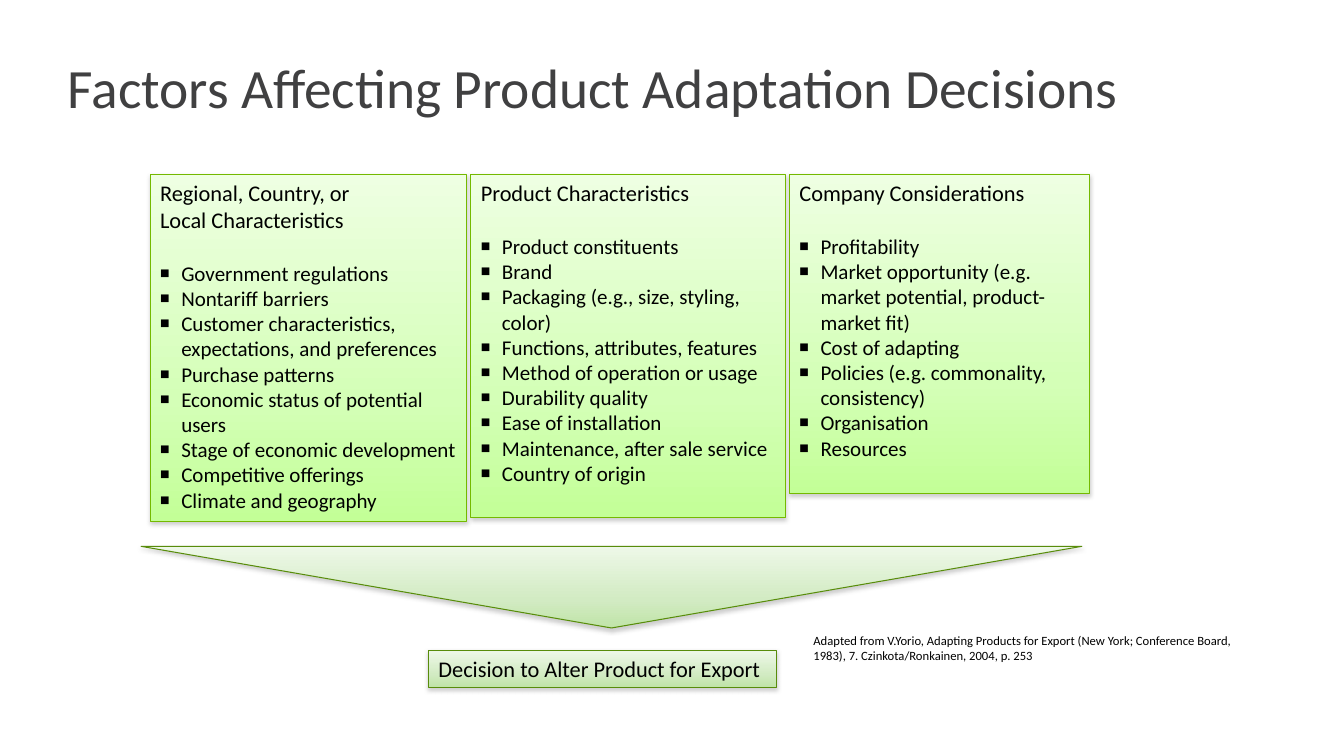
from lxml import etree
from pptx import Presentation
from pptx.dml.color import RGBColor
from pptx.enum.shapes import MSO_SHAPE
from pptx.enum.text import MSO_ANCHOR, MSO_AUTO_SIZE, PP_ALIGN
from pptx.oxml.ns import qn
from pptx.util import Inches, Pt

RECT = MSO_SHAPE.RECTANGLE
MERGE = MSO_SHAPE.FLOWCHART_MERGE
TOP, MIDDLE = MSO_ANCHOR.TOP, MSO_ANCHOR.MIDDLE
LEFT = PP_ALIGN.LEFT
FIXED = MSO_AUTO_SIZE.NONE

LIME = ("EEFFE2", "D4FFB7", "C3FF97")
SAGE = ("EEF8E8", "D2EBC3", "C0E4A8")
STOPS = (0, 65, 100)
INDENT = 0.21

FACTORS = [
    ((1.49, 1.73, 3.14, 3.44),
     ["Regional, Country, or", "Local Characteristics"],
     ["Government regulations", "Nontariff barriers",
      "Customer characteristics, expectations, and preferences",
      "Purchase patterns", "Economic status of potential users",
      "Stage of economic development", "Competitive offerings",
      "Climate and geography"]),
    ((4.67, 1.73, 3.12, 3.4),
     ["Product Characteristics"],
     ["Product constituents", "Brand",
      "Packaging (e.g., size, styling, color)",
      "Functions, attributes, features", "Method of operation or usage",
      "Durability quality", "Ease of installation",
      "Maintenance, after sale service", "Country of origin"]),
    ((7.83, 1.73, 2.98, 3.17),
     ["Company Considerations"],
     ["Profitability",
      "Market opportunity (e.g. market potential, product-market fit)",
      "Cost of adapting", "Policies (e.g. commonality, consistency)",
      "Organisation", "Resources"]),
]


def paint(color, tone):
    """Set a colour format from a hex string."""
    color.rgb = RGBColor.from_string(tone)


def add(parent, tag, **attrs):
    """Append a drawing element and return it."""
    return etree.SubElement(parent, qn(tag), attrs)


def place(shape, box):
    """Move and size a shape to a box in inches."""
    shape.left, shape.top, shape.width, shape.height = map(Inches, box)


def write(frame, text, size=16, tone="000000", first=False, bullet=False,
          before=0, lines=None):
    """Write one formatted paragraph into a text frame."""
    para = frame.paragraphs[0] if first else frame.add_paragraph()
    para.alignment = LEFT
    if bullet:
        props = para._p.get_or_add_pPr()
        props.set("marL", str(Inches(INDENT)))
        props.set("indent", str(-Inches(INDENT)))
        add(props, "a:buSzPct", val="75000")
        add(props, "a:buFont", typeface="Arial")
        add(props, "a:buChar", char="■")
    if before:
        para.space_before = Pt(before)
    if lines:
        para.line_spacing = lines
    run = para.add_run()
    run.text = text
    run.font.size = Pt(size)
    run.font.name = "Calibri"
    paint(run.font.color, tone)


def panel(slide, kind, box, tones, edge):
    """Draw a shaded shape with a soft shadow and return its text frame."""
    shape = slide.shapes.add_shape(kind, *map(Inches, box))
    shape.fill.gradient()
    shape.fill.gradient_angle = 270
    props = shape._element.spPr
    stops = props.find(qn("a:gradFill")).find(qn("a:gsLst"))
    for old in list(stops):
        stops.remove(old)
    for stop, tone in zip(STOPS, tones):
        mark = add(stops, "a:gs", pos=str(stop * 1000))
        add(mark, "a:srgbClr", val=tone)
    paint(shape.line.color, edge)
    shape.line.width = Pt(0.75)
    shape.shadow.inherit = False
    shade = add(props.find(qn("a:effectLst")), "a:outerShdw",
                blurRad=str(Pt(3.1)), dist=str(Pt(1.6)), dir="5400000",
                rotWithShape="0")
    color = add(shade, "a:srgbClr", val="808080")
    add(color, "a:alpha", val="38000")
    frame = shape.text_frame
    frame.vertical_anchor = TOP
    frame.word_wrap = True
    return frame


def head(slide, box):
    """Place and write the slide title."""
    title = slide.shapes.title
    place(title, box)
    frame = title.text_frame
    frame.auto_size = FIXED
    frame.vertical_anchor = MIDDLE
    write(frame, "Factors Affecting Product Adaptation Decisions",
          size=39.6, tone="404041", first=True, lines=0.9)


def factor(slide, box, heads, items):
    """Draw one column of factors under its heading."""
    frame = panel(slide, RECT, box, LIME, "74B900")
    for i, text in enumerate(heads):
        write(frame, text, first=i == 0)
    for i, text in enumerate(items):
        write(frame, text, size=15, bullet=True, before=0 if i else 19.5)


def result(slide, box):
    """Draw the funnel and the decision box below it."""
    left, top, width, height = box
    panel(slide, MERGE, (left, top, width, 0.81), SAGE, "588C0B")
    low = (left + 2.85, top + height - 0.37, 3.45, 0.37)
    frame = panel(slide, RECT, low, SAGE, "588C0B")
    frame.word_wrap = False
    write(frame, "Decision to Alter Product for Export", first=True)


def source(slide, box):
    """Write the source citation."""
    frame = slide.shapes.add_textbox(*map(Inches, box)).text_frame
    frame.word_wrap = True
    write(frame, "Adapted from V.Yorio, Adapting Products for Export "
          "(New York; Conference Board, 1983), 7. Czinkota/Ronkainen, "
          "2004, p. 253", size=9, first=True)


def main():
    """Build the slide and save it."""
    deck = Presentation()
    deck.slide_width, deck.slide_height = Inches(13.33), Inches(7.5)
    slide = deck.slides.add_slide(deck.slide_layouts[5])
    head(slide, (0.57, 0.48, 10.82, 0.83))
    result(slide, (1.4, 5.42, 9.33, 1.4))
    source(slide, (7.97, 6.23, 4.43, 0.56))
    for box, heads, items in FACTORS:
        factor(slide, box, heads, items)
    deck.save("out.pptx")


if __name__ == "__main__":
    main()
